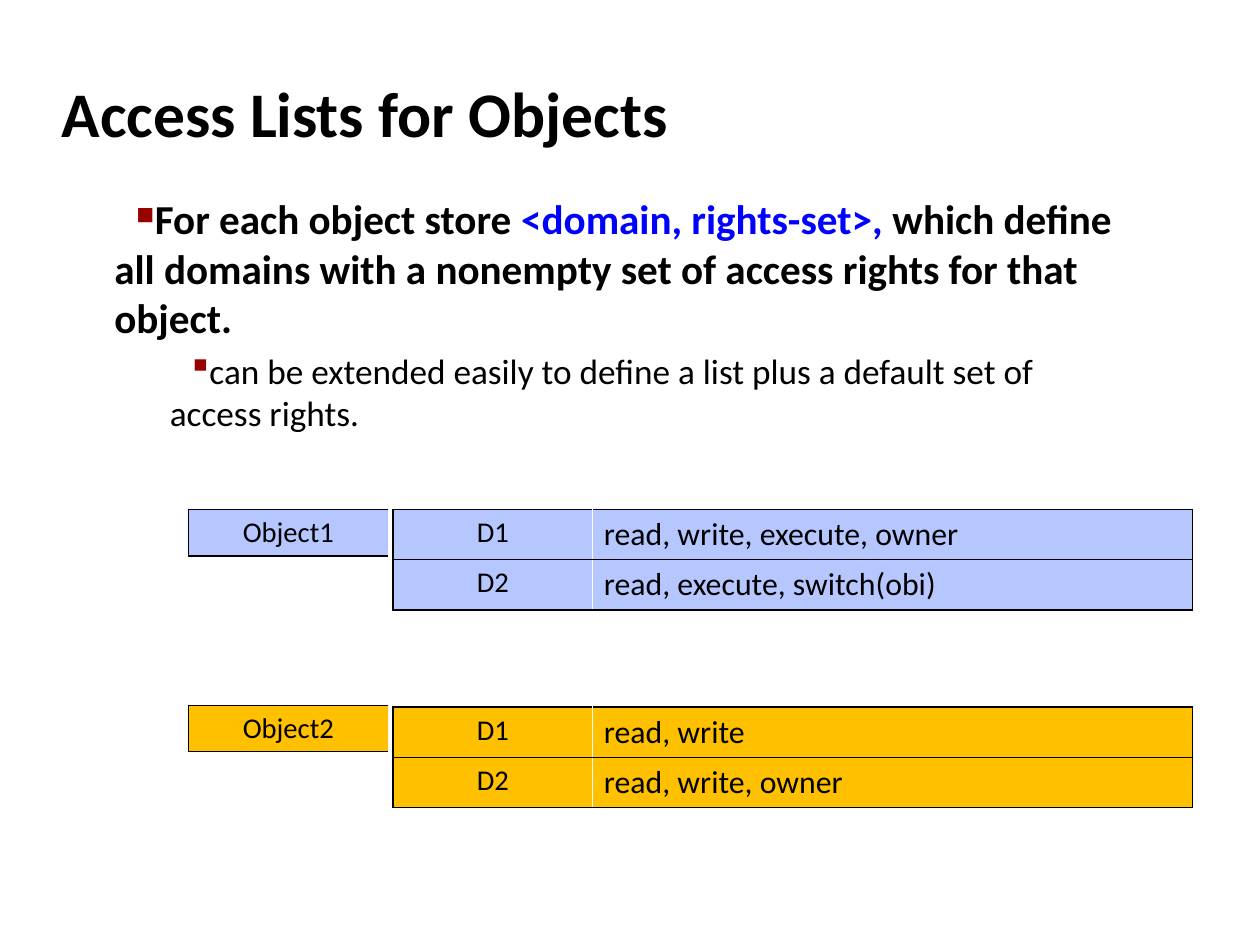
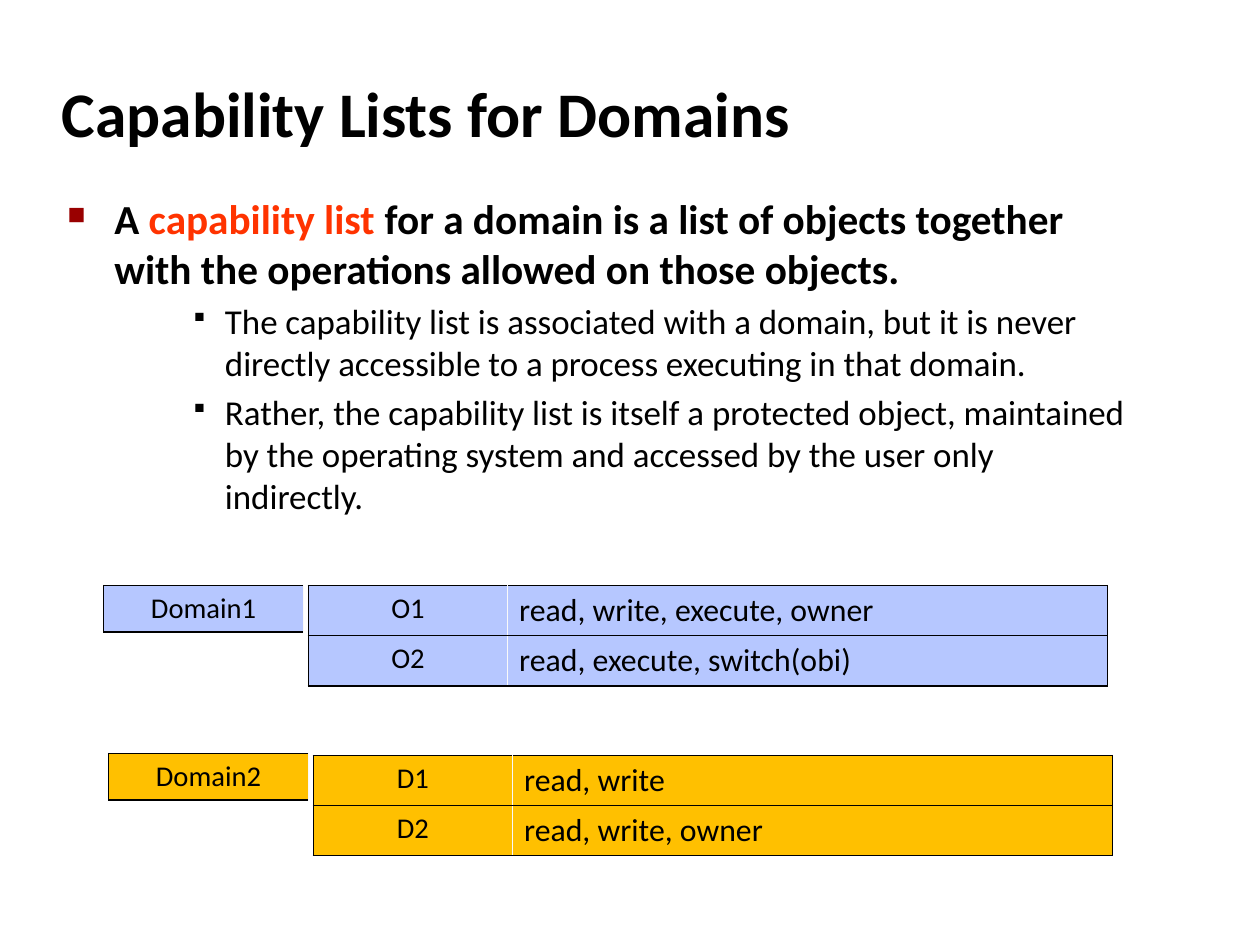
from lxml.etree import SubElement
from pptx import Presentation
from pptx.dml.color import RGBColor
from pptx.enum.text import MSO_ANCHOR, PP_ALIGN
from pptx.oxml import parse_xml
from pptx.oxml.ns import nsdecls, qn
from pptx.util import Pt

COLORS = {
    "text": "000000",
    "bullet": "990000",
    "blue": "0000FF",
    "red": "FF3300",
    "first": "B6C7FF",
    "second": "FFC000",
    "border": "000000",
    "divider": "F9F9F9",
}
FONT = "Calibri"
BULLET_FONT = "Wingdings"
LARGE_SQUARE = "n"
SMALL_SQUARE = "§"
LABEL_WIDTH = 125.7
RIGHTS_WIDTH = 378
GRID_OFFSET = 128.8
LABEL_HEIGHT = 29.2
ROW_HEIGHT = 31.6


def color(name):
    """Return the named colour."""
    return RGBColor.from_string(COLORS[name])


def style_font(font, size, bold=False):
    """Apply the shared typeface with a size and weight."""
    font.name = FONT
    font.size = Pt(size)
    font.bold = bold
    font.color.rgb = color("text")


def set_frame(text_frame, anchor):
    """Give a text frame the shared insets and wrapping."""
    text_frame.word_wrap = True
    text_frame.vertical_anchor = anchor
    text_frame.margin_left = text_frame.margin_right = Pt(7.9)
    text_frame.margin_top = text_frame.margin_bottom = Pt(4)


def add_titled_slide(presentation, title):
    """Add a title-only slide with its title formatted."""
    slide = presentation.slides.add_slide(presentation.slide_layouts[5])
    shape = slide.shapes.title
    shape.left, shape.top, shape.width, shape.height = Pt(31), Pt(37.6), Pt(659), Pt(66)
    set_frame(shape.text_frame, MSO_ANCHOR.MIDDLE)
    shape.text_frame.text = title
    paragraph = shape.text_frame.paragraphs[0]
    paragraph.alignment = PP_ALIGN.LEFT
    style_font(paragraph.font, 40, True)
    return slide


def set_bullet(paragraph, character, percent, margin, indent, color_name):
    """Give a paragraph a bullet and its indents."""
    properties = paragraph._p.get_or_add_pPr()
    properties.set("marL", str(Pt(margin)))
    properties.set("indent", str(Pt(indent)))
    bullet_color = SubElement(properties, qn("a:buClr"))
    SubElement(bullet_color, qn("a:srgbClr"), val=COLORS[color_name])
    SubElement(properties, qn("a:buSzPct"), val=str(percent * 1000))
    SubElement(properties, qn("a:buFont"), typeface=BULLET_FONT, charset="2")
    SubElement(properties, qn("a:buChar"), char=character)


def add_body(slide, height, items):
    """Add the bulleted text, one item per paragraph."""
    shape = slide.shapes.add_textbox(Pt(34.6), Pt(118), Pt(685.4), Pt(height))
    text_frame = shape.text_frame
    set_frame(text_frame, MSO_ANCHOR.TOP)
    for index, (level, size, bold, bullet, runs) in enumerate(items):
        paragraph = text_frame.add_paragraph() if index else text_frame.paragraphs[0]
        paragraph.level = level
        paragraph.space_before = Pt(round(size * 0.2, 1))
        set_bullet(paragraph, *bullet)
        style_font(paragraph.font, size, bold)
        for text, color_name in runs:
            run = paragraph.add_run()
            run.text = text
            if color_name != "text":
                run.font.color.rgb = color(color_name)


def set_borders(cell, left, right):
    """Draw the four borders of a cell, black above and below."""
    properties = cell._tc.get_or_add_tcPr()
    sides = (("L", left), ("R", right), ("T", "border"), ("B", "border"))
    for index, (side, name) in enumerate(sides):
        width = Pt(1 if name == "border" else 0.75)
        properties.insert(index, parse_xml(
            f'<a:ln{side} {nsdecls("a")} w="{width}"><a:solidFill>'
            f'<a:srgbClr val="{COLORS[name]}"/></a:solidFill></a:ln{side}>'
        ))


def add_grid(slide, left, top, widths, row_height, rows, fill):
    """Add a table with a centred first column."""
    shape = slide.shapes.add_table(
        len(rows), len(widths), Pt(left), Pt(top),
        Pt(sum(widths)), Pt(row_height * len(rows)),
    )
    table = shape.table
    table.first_row = table.horz_banding = False
    for column, width in zip(table.columns, widths):
        column.width = Pt(width)
    for row_index, row in enumerate(rows):
        for column_index, text in enumerate(row):
            cell = table.cell(row_index, column_index)
            cell.text = text
            cell.fill.solid()
            cell.fill.fore_color.rgb = color(fill)
            paragraph = cell.text_frame.paragraphs[0]
            if column_index == 0:
                paragraph.alignment = PP_ALIGN.CENTER
                style_font(paragraph.font, 18)
                set_borders(cell, "border", "divider")
            else:
                style_font(paragraph.font, 20)
                set_borders(cell, "divider", "border")


def add_access_list(slide, left, label_top, grid_top, label, rows, fill):
    """Add a label and, beside it, the grid of its rights."""
    add_grid(slide, left + GRID_OFFSET, grid_top, [LABEL_WIDTH, RIGHTS_WIDTH],
             ROW_HEIGHT, rows, fill)
    add_grid(slide, left, label_top, [LABEL_WIDTH], LABEL_HEIGHT, [[label]], fill)


def add_access_slide(presentation):
    """Build the slide on access lists."""
    slide = add_titled_slide(presentation, "Access Lists for Objects")
    add_body(slide, 171, [
        (0, 25.9, True, (LARGE_SQUARE, 60, 29.5, 13.7, "bullet"), [
            ("For each object store ", "text"),
            ("<domain, rights-set>,", "blue"),
            (" which define all domains with a nonempty set of access rights "
             "for that object.", "text"),
        ]),
        (1, 22.2, False, (SMALL_SQUARE, 110, 64.5, 13.7, "bullet"), [
            ("can be extended easily to define a list plus a default set of "
             "access rights.", "text"),
        ]),
    ])
    add_access_list(slide, 118.8, 321, 321, "Object1", [
        ["D1", "read, write, execute, owner"],
        ["D2", "read, execute, switch(obi)"],
    ], "first")
    add_access_list(slide, 118.8, 444.2, 445.4, "Object2", [
        ["D1", "read, write"],
        ["D2", "read, write, owner"],
    ], "second")


def add_capability_slide(presentation):
    """Build the slide on capability lists."""
    slide = add_titled_slide(presentation, "Capability Lists for Domains")
    detail_bullet = (SMALL_SQUARE, 80, 99.2, -20, "text")
    add_body(slide, 431, [
        (0, 26, True, (LARGE_SQUARE, 60, 29.5, -29.5, "bullet"), [
            ("A ", "text"),
            ("capability list", "red"),
            (" for a domain is a list of objects together with the operations "
             "allowed on those objects.", "text"),
        ]),
        (2, 22, False, detail_bullet, [
            ("The capability list is associated with a domain, but it is never "
             "directly accessible to a process executing in that domain.", "text"),
        ]),
        (2, 22, False, detail_bullet, [
            ("Rather, the capability list is itself a protected object, maintained "
             "by the operating system and accessed by the user only indirectly.",
             "text"),
        ]),
    ])
    add_access_list(slide, 65.4, 368.9, 368.9, "Domain1", [
        ["O1", "read, write, execute, owner"],
        ["O2", "read, execute, switch(obi)"],
    ], "first")
    add_access_list(slide, 68.5, 474.7, 475.9, "Domain2", [
        ["D1", "read, write"],
        ["D2", "read, write, owner"],
    ], "second")


def main():
    """Create and save the presentation."""
    presentation = Presentation()
    presentation.slide_width = Pt(793.75)
    presentation.slide_height = Pt(595.25)
    add_access_slide(presentation)
    add_capability_slide(presentation)
    presentation.save("out.pptx")


if __name__ == "__main__":
    main()
